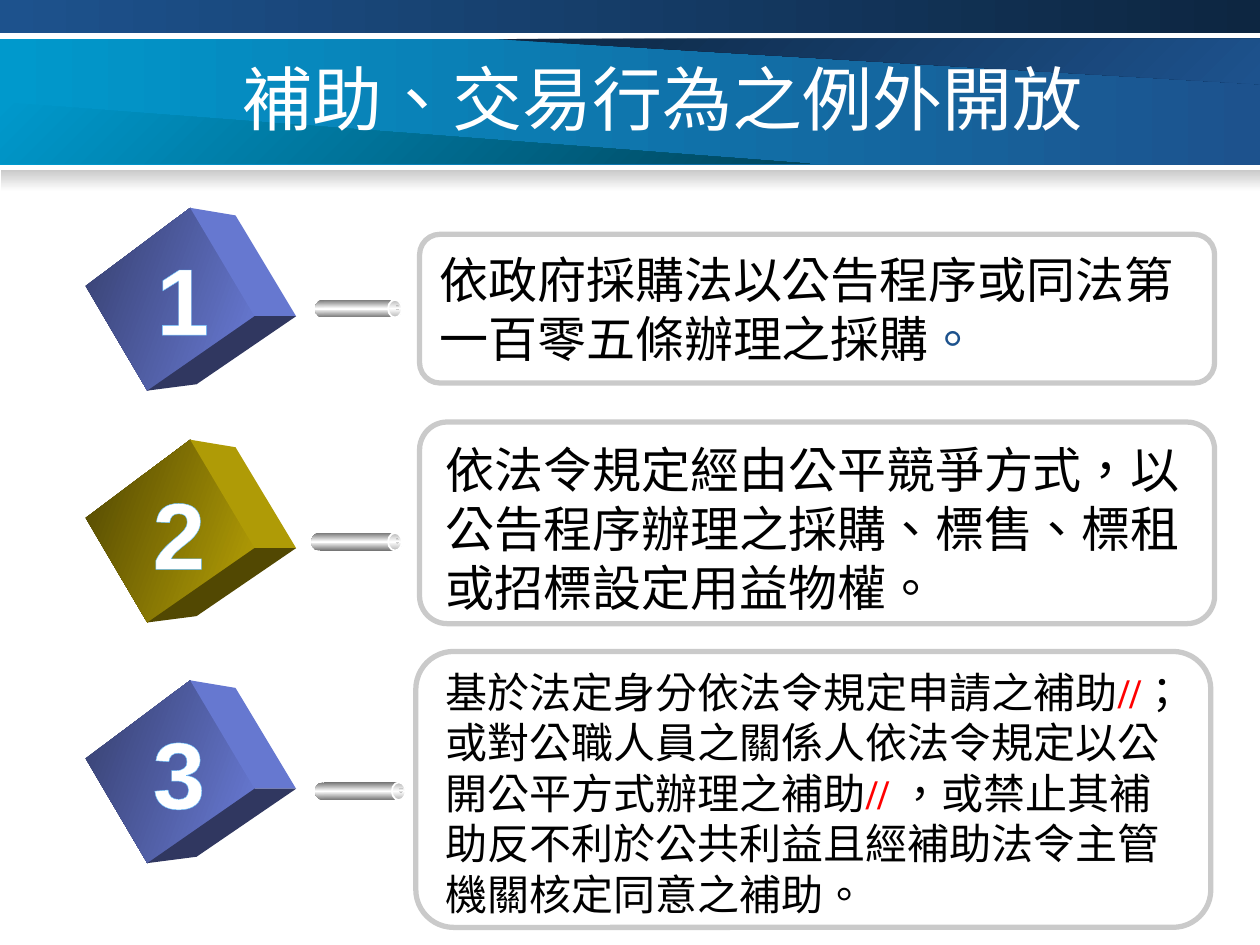
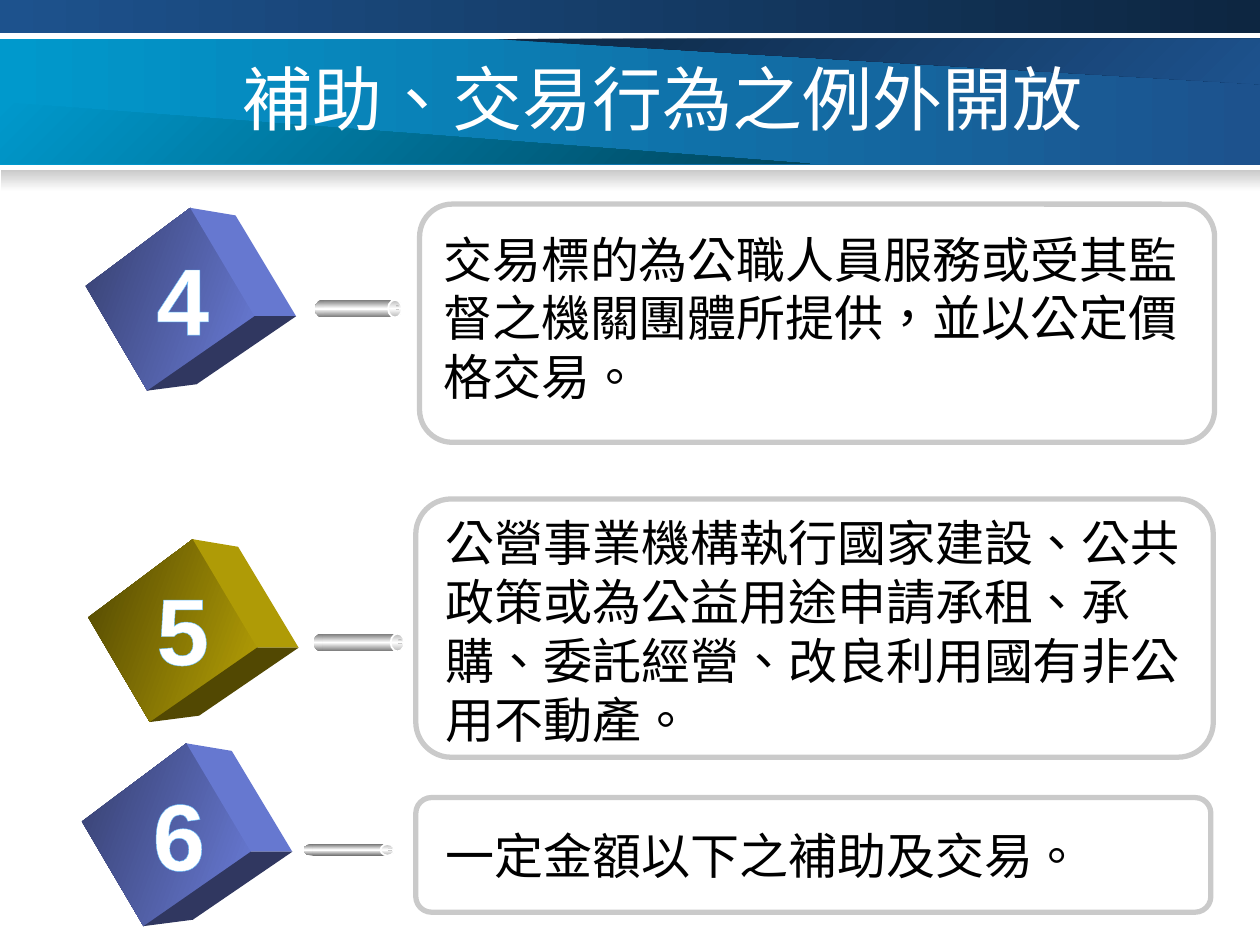
from lxml import etree
from pptx import Presentation
from pptx.dml.color import RGBColor
from pptx.enum import shapes, text
from pptx.oxml.ns import qn
from pptx.util import Inches, Pt

WHITE = RGBColor(0xFF, 0xFF, 0xFF)
BLACK = RGBColor(0, 0, 0)
RED = RGBColor(0xFF, 0, 0)
NAVY = RGBColor(0x1D, 0x52, 0x8D)
DARK_NAVY = RGBColor(0x0D, 0x26, 0x41)
CYAN = RGBColor(0x00, 0x99, 0xCC)
DARK_CYAN = RGBColor(0x00, 0x46, 0x5E)
SILVER = RGBColor(0xCA, 0xCA, 0xCA)
STEEL = RGBColor(0x76, 0x76, 0x76)
RING_GREY = RGBColor(0xB6, 0xB6, 0xB6)
GLOW = RGBColor(0x68, 0xC0, 0xFE)

# Cube colours: dark and light end of the front, side, bottom
BLUE_CUBE = [RGBColor(0x36, 0x3F, 0x6E), RGBColor(0x6A, 0x7C, 0xD8),
             RGBColor(0x66, 0x78, 0xD0), RGBColor(0x30, 0x37, 0x60)]
GOLD_CUBE = [RGBColor(0x50, 0x46, 0x02), RGBColor(0xB8, 0xA2, 0x06),
             RGBColor(0xAF, 0x9B, 0x06), RGBColor(0x52, 0x48, 0x02)]
CUBE_FRONT = [(-0.14, 0.43), (0.69, -0.19), (1.2, 0.67), (0.35, 1.26)]
CUBE_SIDE = [(0.69, -0.19), (1.05, -0.13), (1.53, 0.67), (1.2, 0.67)]
CUBE_BOTTOM = [(1.2, 0.67), (1.53, 0.67), (0.74, 1.21), (0.35, 1.26)]

RECT = shapes.MSO_SHAPE.RECTANGLE
OVAL = shapes.MSO_SHAPE.OVAL
TITLE = "補助、交易行為之例外開放"
SERIF, SANS, CJK = "Times New Roman", "Arial", "Noto Sans CJK SC"


def paint(shape, colours, angle=0):
    """Fill with one colour or an even gradient, without line or shadow."""
    shape.shadow.inherit = False
    shape.line.fill.background()
    if len(colours) == 1:
        shape.fill.solid()
        shape.fill.fore_color.rgb = colours[0]
        return
    shape.fill.gradient()
    gradient = shape._element.spPr.find(qn("a:gradFill"))
    stops = gradient.find(qn("a:gsLst"))
    for stop in list(stops):
        stops.remove(stop)
    for i, colour in enumerate(colours):
        stop = etree.SubElement(stops, qn("a:gs"), pos=str(i * 100000 // (len(colours) - 1)))
        etree.SubElement(stop, qn("a:srgbClr"), val=str(colour))
    gradient.find(qn("a:lin")).set("ang", str(angle * 60000))


def write(slide, area, runs, size, font, wrap=True, align=None, anchor=None,
          bold=False, outline=None, spacing=None):
    """Add a text box; runs holds (text, colour) or (text, colour, changes)."""
    box = slide.shapes.add_textbox(*map(Inches, area))
    frame = box.text_frame
    frame.word_wrap = wrap
    frame.vertical_anchor = anchor
    paragraph = frame.paragraphs[0]
    paragraph.alignment = align
    # Punctuation stays inside the frame
    paragraph._p.get_or_add_pPr().set("hangingPunct", "0")
    if spacing:
        paragraph.line_spacing = Pt(round(size * spacing, 1))
    for words, colour, *changes in runs:
        change = changes[0] if changes else {}
        run = paragraph.add_run()
        run.text = words
        run.font.size = Pt(size)
        run.font.bold = change.get("bold", bold)
        run.font.color.rgb = colour
        run.font.name = change.get("font", font)
        properties = run._r.get_or_add_rPr()
        properties.set("lang", "zh-TW")
        east_asian = etree.Element(qn("a:ea"), typeface=CJK)
        properties.find(qn("a:latin")).addnext(east_asian)
        if outline:
            edge = etree.Element(qn("a:ln"), w="31500")
            fill = etree.SubElement(edge, qn("a:solidFill"))
            etree.SubElement(fill, qn("a:srgbClr"), val=str(outline))
            properties.insert(0, edge)


# Each exception: number, cube colours, cube corner, number corner,
# tube (left, top, length, height), frame, text corner and height, size, font, runs
exceptions = [
    [
        ("1", BLUE_CUBE, (0.82, 1.84), (1.14, 1.86), (2.5, 2.38, 0.57, 0.14),
         (3.33, 1.86, 6.31, 1.18), (3.39, 1.93, 1.04), 28, SERIF,
         [("依政府採購法以公告程序或同法第一百零五條辦理之採購", BLACK),
          ("。", NAVY, {"font": SANS})]),
        ("2", GOLD_CUBE, (0.82, 3.68), (1.11, 3.72), (2.47, 4.23, 0.6, 0.14),
         (3.33, 3.35, 6.31, 1.6), (3.44, 3.44, 1.51), 28, SERIF,
         [("依法令規定經由公平競爭方式，以公告程序辦理之採購、標售、標租"
           "或招標設定用益物權。", BLACK)]),
        ("3", BLUE_CUBE, (0.82, 5.59), (1.11, 5.62), (2.5, 6.21, 0.6, 0.14),
         (3.3, 5.17, 6.31, 2.19), (3.44, 5.24, 2.12), 24, SERIF,
         [("基於法定身分依法令規定申請之補助", BLACK),
          ("//", RED, {"bold": True}),
          ("；或對公職人員之關係人依法令規定以公開公平方式辦理之補助", BLACK),
          ("// ", RED, {"bold": True}),
          ("，或禁止其補助反不利於公共利益且經補助法令主管機關核定同意之補助。", BLACK)]),
    ],
    [
        ("4", BLUE_CUBE, (0.82, 1.84), (1.14, 1.86), (2.5, 2.38, 0.57, 0.14),
         (3.33, 1.62, 6.31, 1.89), (3.42, 1.77, 1.51), 28, CJK,
         [("交易標的為公職人員服務或受其監督之機關團體所提供，並以公定價格交易。", BLACK)]),
        ("5", GOLD_CUBE, (0.84, 4.47), (1.14, 4.48), (2.49, 5.03, 0.6, 0.14),
         (3.3, 3.96, 6.33, 2.05), (3.44, 4.02, 1.99), 28, CJK,
         [("公營事業機構執行國家建設、公共政策或為公益用途申請承租、承購、"
           "委託經營、改良利用國有非公用不動產。", BLACK)]),
        ("6", BLUE_CUBE, (0.79, 6.09), (1.11, 6.11), (2.41, 6.7, 0.6, 0.09),
         (3.3, 6.33, 6.31, 0.91), (3.44, 6.5, 0.57), 28, CJK,
         [("一定金額以下之補助及交易。", BLACK)]),
    ],
]

deck = Presentation()
deck.slide_width, deck.slide_height = Inches(10), Inches(7.5)

for slide_items in exceptions:
    slide = deck.slides.add_slide(deck.slide_layouts[6])

    # Header bands
    for area, colours, angle in [
        ((0, 0.31, 10, 1), [CYAN, NAVY], 0),
        ((0, 0, 10, 0.26), [NAVY, DARK_NAVY], 0),
        ((0.01, 1.35, 9.99, 0.17), [SILVER, WHITE], 90),
    ]:
        paint(slide.shapes.add_shape(RECT, *map(Inches, area)), colours, angle)

    # Slanted wedges on the title band
    facets = [([(3.93, 0.31), (10, 0.67), (10, 0.31)], [DARK_NAVY, NAVY], 45),
              ([(0, 0.81), (6.43, 1.3), (0, 1.3)], [CYAN, DARK_CYAN], 45)]

    # Cube faces
    for number, cube, (cube_x, cube_y), *rest in slide_items:
        for face, colours in [(CUBE_FRONT, cube[:2]), (CUBE_SIDE, cube[2:3]),
                              (CUBE_BOTTOM, cube[3:])]:
            corners = [(cube_x + x, cube_y + y) for x, y in face]
            facets.append((corners, colours, 20))

    for corners, colours, angle in facets:
        points = [(Inches(x), Inches(y)) for x, y in corners]
        outline = slide.shapes.build_freeform(*points[0])
        outline.add_line_segments(points[1:], close=True)
        paint(outline.convert_to_shape(), colours, angle)

    write(slide, (1.83, 0.3, 7.25, 0.95), [(TITLE, WHITE)], 40, SANS,
          anchor=text.MSO_ANCHOR.MIDDLE)

    for number, cube, corner, number_at, tube, frame_area, words_at, size, font, runs in slide_items:
        # Tube from the cube to the frame
        left, top, length, height = tube
        ring_x = left + length + 0.01
        for kind, area, shade in [
            (OVAL, (left, top, 0.12, height), STEEL),
            (RECT, (left + 0.07, top, length, height), STEEL),
            (OVAL, (ring_x, top, 0.11, height), RING_GREY),
            (OVAL, (ring_x + 0.06, top + 0.3 * height, 0.03, 0.3 * height), RING_GREY),
        ]:
            part = slide.shapes.add_shape(kind, *map(Inches, area))
            paint(part, [shade, WHITE, shade], 90)
            if area[0] == ring_x:
                part.line.color.rgb = WHITE
                part.line.width = Pt(1)

        # Rounded frame and its text
        frame = slide.shapes.add_shape(shapes.MSO_SHAPE.ROUNDED_RECTANGLE,
                                       *map(Inches, frame_area))
        frame.adjustments[0] = 0.137
        frame.shadow.inherit = False
        frame.fill.background()
        frame.line.color.rgb = SILVER
        frame.line.width = Pt(3)
        words_x, words_y, words_height = words_at
        write(slide, (words_x, words_y, 6.1, words_height), runs, size, font, spacing=1.2)

        # Number on the cube
        write(slide, (*number_at, 0.62, 1.01), [(number, WHITE)], 54, SANS, wrap=False,
              align=text.PP_ALIGN.CENTER, bold=True, outline=GLOW)

deck.save("out.pptx")
